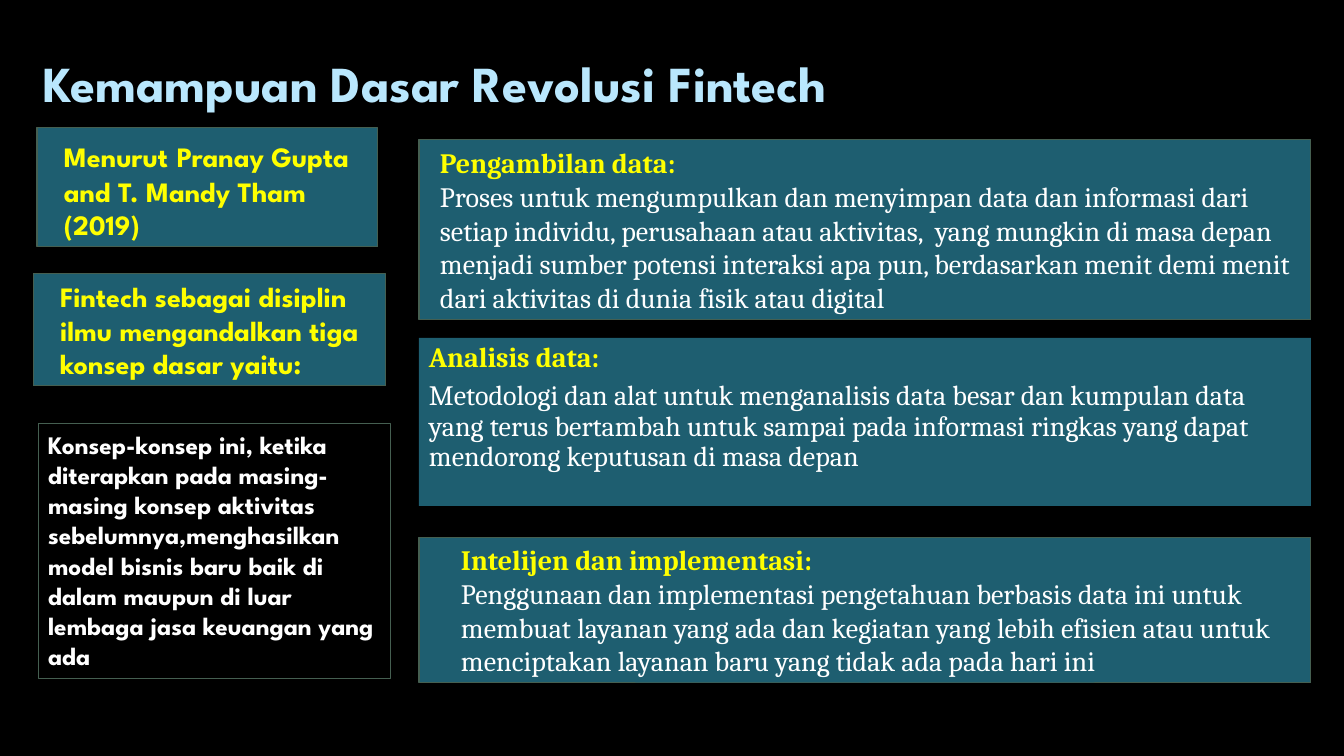
from lxml import etree
from pptx import Presentation
from pptx import util as u
from pptx.dml.color import RGBColor
from pptx.enum import shapes, text
from pptx.oxml.ns import qn

PX = 12192000 / 1344  # EMU per px


def px(n):
    return u.Emu(round(n * PX))


def colour(hex_code):
    return RGBColor.from_string(hex_code)


class Deck:
    """Holds the style and the current slide."""
    HEADING, BODY = "League Spartan", "Cambria"
    BLACK, TEAL, BORDER = "000000", "1E5E70", "455F51"
    SKY, YELLOW, WHITE = "B9E7FD", "FFFF00", "FFFFFF"

    def __init__(self):
        self.prs = Presentation()
        self.prs.slide_width, self.prs.slide_height = px(1344), px(756)
        self.slide = self.prs.slides.add_slide(self.prs.slide_layouts[1])
        background = self.slide.background.fill
        background.solid()
        background.fore_color.rgb = colour(self.BLACK)

    def place(self, shape, left, top, width, height):
        shape.left, shape.top = px(left), px(top)
        shape.width, shape.height = px(width), px(height)

    def frame(self, shape, anchor, inset=10):
        frame = shape.text_frame
        frame.word_wrap = True
        frame.auto_size = text.MSO_AUTO_SIZE.NONE
        frame.vertical_anchor = anchor
        frame.margin_left, frame.margin_right = px(inset), px(10)
        frame.margin_top = frame.margin_bottom = px(5)
        return frame

    def style(self, paragraph, font, size, hex_code, bold=True):
        paragraph.alignment = text.PP_ALIGN.LEFT
        paragraph.font.name, paragraph.font.size = font, u.Pt(size)
        paragraph.font.bold = bold
        paragraph.font.color.rgb = colour(hex_code)

    def title(self, wording, *box):
        title = self.slide.shapes.title
        self.place(title, *box)
        line = self.frame(title, text.MSO_ANCHOR.BOTTOM).paragraphs[0]
        line.text = wording
        line.line_spacing = 0.9
        self.style(line, self.HEADING, 36, self.SKY)

    def panel(self, box, inset, anchor=text.MSO_ANCHOR.MIDDLE, filled=True):
        panel = self.slide.shapes.add_shape(shapes.MSO_SHAPE.RECTANGLE, *map(px, box))
        panel.shadow.inherit = False
        if filled:
            panel.fill.solid()
            panel.fill.fore_color.rgb = colour(self.TEAL)
        else:
            panel.fill.background()
        panel.line.color.rgb = colour(self.BORDER)
        panel.line.width = u.Pt(0.75)
        return self.frame(panel, anchor, inset)

    def remark(self, runs, box, inset, size=20, hex_code=YELLOW, **look):
        line = self.panel(box, inset, **look).paragraphs[0]
        for wording, run_size in runs:
            run = line.add_run()
            run.text = wording
            if run_size != size:
                run.font.size = u.Pt(run_size)
        self.style(line, self.HEADING, size, hex_code)

    def concept(self, frame, name, meaning):
        frame.text = f"{name}\n{meaning}"
        heading, detail = frame.paragraphs
        self.style(heading, self.BODY, 20, self.YELLOW)
        self.style(detail, self.BODY, 20, self.WHITE, bold=False)

    def body_concept(self, name, meaning, *box):
        body = self.slide.placeholders[1]
        self.place(body, *box)
        body.fill.solid()
        body.fill.fore_color.rgb = colour(self.TEAL)
        frame = self.frame(body, text.MSO_ANCHOR.TOP)
        frame.text = f"{name}\n{meaning}"
        for paragraph, space in zip(frame.paragraphs, (0, 6)):
            props = paragraph._p.get_or_add_pPr()
            props.set("marL", "0")
            props.set("indent", "0")
            etree.SubElement(props, qn("a:buNone"))
            paragraph.line_spacing = 0.9
            paragraph.space_before = u.Pt(space)
        heading, detail = frame.paragraphs
        self.style(heading, self.BODY, 20, self.YELLOW)
        self.style(detail, self.BODY, 20, self.WHITE, bold=False)


def main():
    deck = Deck()
    deck.title("Kemampuan Dasar Revolusi Fintech", 33, 42, 1142, 76)

    # Right column: the three concepts
    left, width = 419, 892
    deck.concept(
        deck.panel((left, 140, width, 180), 21), "Pengambilan data:",
        "Proses untuk mengumpulkan dan menyimpan data dan informasi dari setiap "
        "individu, perusahaan atau aktivitas,  yang mungkin di masa depan menjadi "
        "sumber potensi interaksi apa pun, berdasarkan menit demi menit dari "
        "aktivitas di dunia fisik atau digital")
    deck.body_concept(
        "Analisis data:",
        "Metodologi dan alat untuk menganalisis data besar dan kumpulan data yang "
        "terus bertambah untuk sampai pada informasi ringkas yang dapat mendorong "
        "keputusan di masa depan", left, 338, width, 168)
    deck.concept(
        deck.panel((left, 537, width, 146), 42), "Intelijen dan implementasi:",
        "Penggunaan dan implementasi pengetahuan berbasis data ini untuk membuat "
        "layanan yang ada dan kegiatan yang lebih efisien atau untuk menciptakan "
        "layanan baru yang tidak ada pada hari ini")

    # Left column: source, premise and outcome
    deck.remark([("Menurut", 20), (" ", 24),
                 ("Pranay Gupta and T. Mandy Tham (2019)", 20)],
                (37, 128, 341, 119), 27)
    deck.remark([("Fintech sebagai disiplin ilmu mengandalkan tiga konsep dasar "
                  "yaitu:", 20)], (33, 274, 353, 112), 27)
    deck.remark([("Konsep-konsep ini, ketika diterapkan pada masing-masing konsep "
                  "aktivitas sebelumnya,menghasilkan model bisnis baru baik di dalam "
                  "maupun di luar lembaga jasa keuangan yang ada", 18)],
                (38, 424, 353, 255), 10, size=18, hex_code=deck.WHITE,
                anchor=text.MSO_ANCHOR.TOP, filled=False)

    deck.prs.save("out.pptx")


if __name__ == "__main__":
    main()
